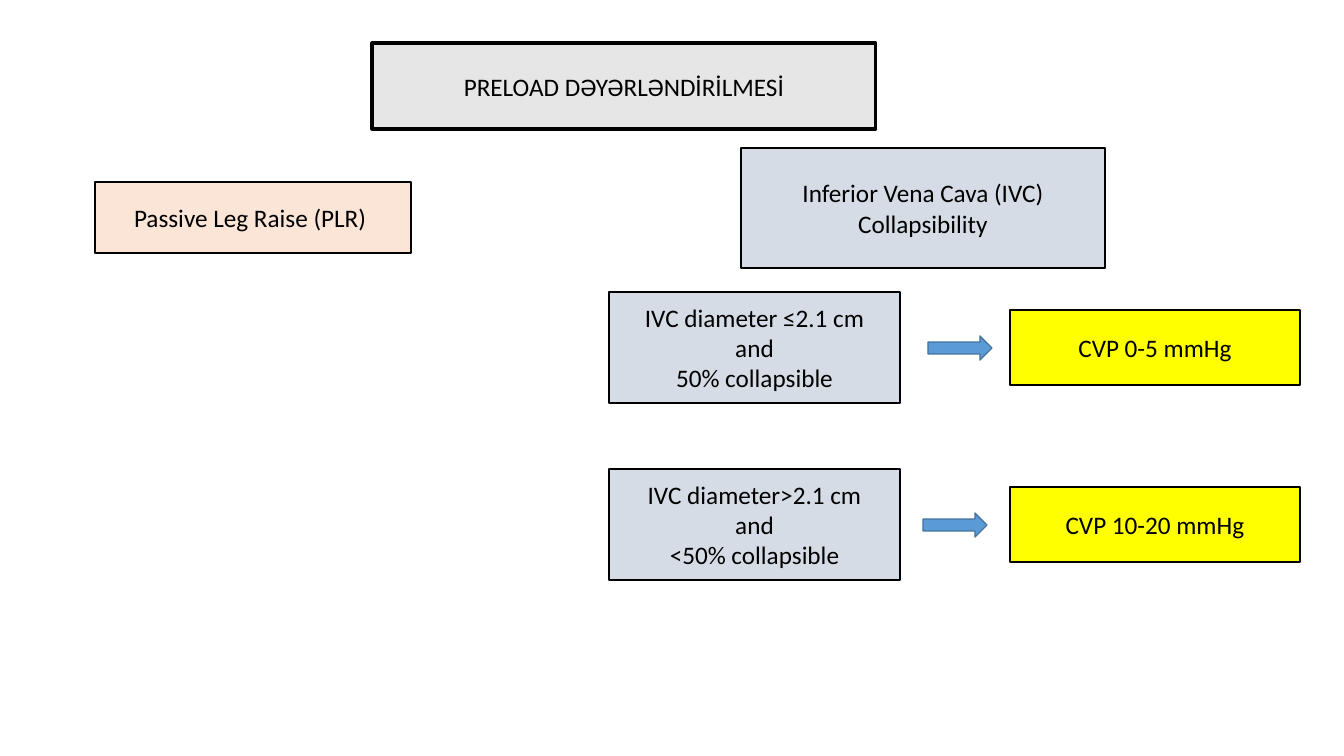
from pptx import Presentation
from pptx import util as u
from pptx.dml.color import RGBColor
from pptx.enum import shapes, text

PX = 914400 / 100.8
THEME = {
    "font": "Calibri", "size": 18, "ink": "000000",
    "title": "E7E6E6", "leg_raise": "FBE5D6", "ivc": "D6DCE5", "cvp": "FFFF00",
    "arrow": "5B9BD5", "arrow_edge": "43739E",
}


def px(value):
    return u.Emu(round(value * PX))


def add_block(kind, place, fill, edge, weight, lines=()):
    block = slide.shapes.add_shape(kind, *map(px, place))
    block.shadow.inherit = False
    block.fill.solid()
    block.fill.fore_color.rgb = RGBColor.from_string(THEME[fill])
    block.line.color.rgb = RGBColor.from_string(THEME[edge])
    block.line.width = u.Pt(weight)
    frame = block.text_frame
    frame.word_wrap = True
    frame.vertical_anchor = text.MSO_ANCHOR.MIDDLE
    for index, line in enumerate(lines):
        paragraph = frame.add_paragraph() if index else frame.paragraphs[0]
        paragraph.text = line
        paragraph.alignment = text.PP_ALIGN.CENTER
        paragraph.font.name = THEME["font"]
        paragraph.font.size = u.Pt(THEME["size"])
        paragraph.font.color.rgb = RGBColor.from_string(THEME["ink"])


deck = Presentation()
deck.slide_width, deck.slide_height = px(1344), px(756)
slide = deck.slides.add_slide(deck.slide_layouts[6])
RECT = shapes.MSO_SHAPE.RECTANGLE
ARROW = shapes.MSO_SHAPE.RIGHT_ARROW

headings = [
    ((372, 43, 504, 86), "title", 2.25, "PRELOAD DƏYƏRLƏNDİRİLMESİ"),
    ((95, 182, 316, 71), "leg_raise", 1.5, "Passive Leg Raise (PLR) "),
    ((741, 148, 364, 120), "ivc", 1.5, "Inferior Vena Cava (IVC) Collapsibility"),
]
for place, fill, weight, heading in headings:
    add_block(RECT, place, fill, "ink", weight, [heading])

findings = [
    (928, ["IVC diameter ≤2.1 cm", "and", "50% collapsible"], "CVP 0-5 mmHg"),
    (923, ["IVC diameter>2.1 cm", "and", "<50% collapsible"], "CVP 10-20 mmHg"),
]
for row, (arrow_left, criteria, pressure) in enumerate(findings):
    top = 292 + row * 177
    add_block(RECT, (609, top, 291, 111), "ivc", "ink", 1.5, criteria)
    add_block(ARROW, (arrow_left, top + 44, 64, 24), "arrow", "arrow_edge", 1)
    add_block(RECT, (1010, top + 18, 290, 75), "cvp", "ink", 1.5, [pressure])

deck.save("out.pptx")
